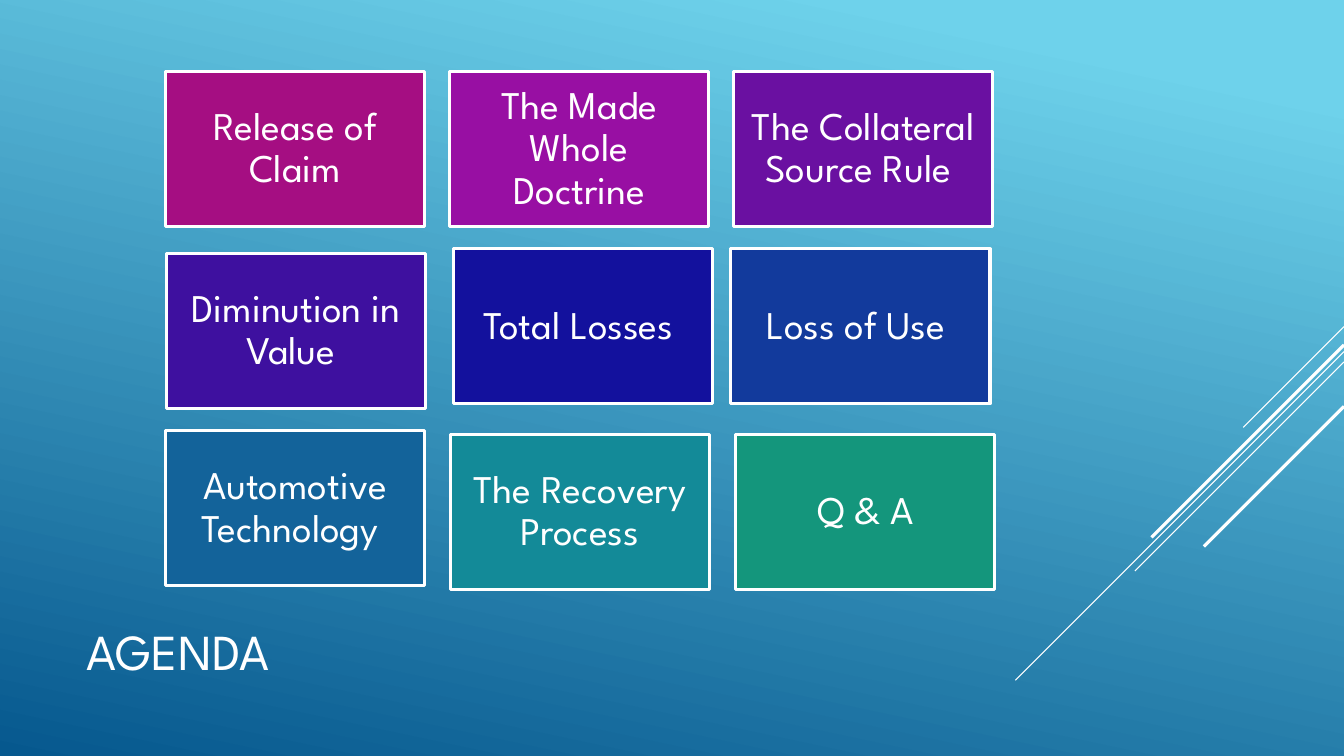
import pptx
import pptx.dml.color
import pptx.enum.shapes
import pptx.enum.text
import pptx.oxml.ns
import pptx.util
from lxml import etree

Cm = pptx.util.Cm
Pt = pptx.util.Pt
ALIGN = pptx.enum.text.PP_ALIGN
ANCHOR = pptx.enum.text.MSO_ANCHOR

HUES = {
    "white": "FFFFFF", "sky": "6ED2EB", "deep": "06588E",
    "pink": "A50E82", "plum": "980FA3", "purple": "6A10A1",
    "violet": "3E109F", "navy": "13119D", "blue": "123A9C",
    "steel": "13639A", "teal": "138A98", "green": "14967C",
}


def hue(name):
    return pptx.dml.color.RGBColor.from_string(HUES[name])


def write(shape, text, size, frame, para):
    """Fill the shape with one white paragraph in the given formats."""
    body = shape.text_frame
    for key, value in frame.items():
        setattr(body, key, value)
    line = body.paragraphs[0]
    for key, value in para.items():
        setattr(line, key, value)
    run = line.add_run()
    run.text = text
    for key, value in {"name": "League Spartan", "size": Pt(size)}.items():
        setattr(run.font, key, value)
    run.font.color.rgb = hue("white")


deck = pptx.Presentation()
deck.slide_width = Cm(33.87)
deck.slide_height = Cm(19.05)
slide = deck.slides.add_slide(deck.slide_layouts[6])

# Background
fill = slide.background.fill
fill.gradient()
fill.gradient_angle = 360 - 102
for stop, name, place in zip(fill.gradient_stops, ("sky", "deep"), (0.1, 1)):
    stop.color.rgb = hue(name)
    stop.position = place

# Diagonal rays at 45 degrees from the right edge: top, reach, weight
edge = 33.87
rays = [
    (8.23, 2.54, 0.75),
    (8.86, 8.28, 0.75),
    (9.12, 5.27, 0.75),
    (8.69, 4.85, 2.25),
    (10.24, 3.53, 2.25),
]
for top, reach, weight in rays:
    ray = slide.shapes.add_connector(
        pptx.enum.shapes.MSO_CONNECTOR.STRAIGHT,
        Cm(edge), Cm(top), Cm(edge - reach), Cm(top + reach))
    ray.line.color.rgb = hue("white")
    ray.line.width = Pt(weight)
    etree.SubElement(ray._element.spPr, pptx.oxml.ns.qn("a:effectLst"))

# Title
title = slide.shapes.add_textbox(Cm(1.93), Cm(14.38), Cm(23.7), Cm(4.19))
write(title, "AGENDA", 36,
      {"word_wrap": True, "vertical_anchor": ANCHOR.MIDDLE},
      {"alignment": ALIGN.LEFT, "line_spacing": 0.9})

# Topic cards: left, top, colour, text
cards = [
    (4.17, 1.8, "pink", "Release of Claim"),
    (11.33, 1.8, "plum", "The Made Whole Doctrine"),
    (18.49, 1.8, "purple", "The Collateral Source Rule "),
    (4.19, 6.38, "violet", "Diminution in Value "),
    (11.43, 6.27, "navy", "Total Losses "),
    (18.42, 6.27, "blue", "Loss of Use "),
    (4.17, 10.85, "steel", "Automotive Technology "),
    (11.35, 10.95, "teal", "The Recovery Process"),
    (18.54, 10.95, "green", "Q & A"),
]
frame = {"word_wrap": True, "vertical_anchor": ANCHOR.MIDDLE}
for side in ("left", "right", "top", "bottom"):
    frame["margin_" + side] = Cm(0.3)
para = {"alignment": ALIGN.CENTER, "line_spacing": 0.9}
for left, top, name, text in cards:
    card = slide.shapes.add_shape(
        pptx.enum.shapes.MSO_SHAPE.RECTANGLE,
        Cm(left), Cm(top), Cm(6.53), Cm(3.91))
    card.shadow.inherit = False
    card.fill.solid()
    card.fill.fore_color.rgb = hue(name)
    card.line.color.rgb = hue("white")
    card.line.width = Pt(2.25)
    write(card, text, 28, frame, para)

deck.save("out.pptx")
